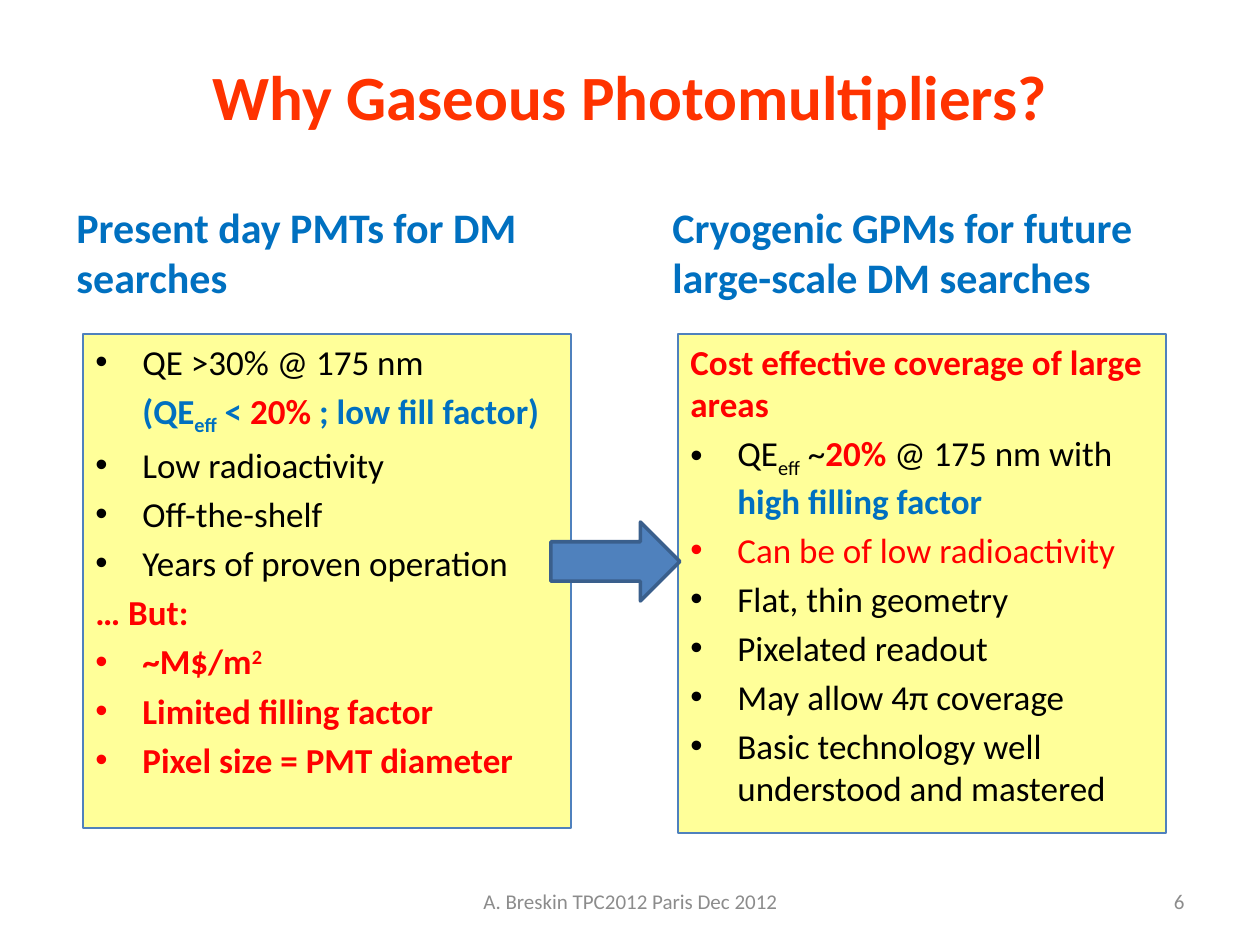
from lxml.etree import SubElement
from pptx import Presentation
from pptx.dml.color import RGBColor
from pptx.enum.shapes import MSO_SHAPE
from pptx.enum.text import MSO_ANCHOR, PP_ALIGN
from pptx.oxml.ns import qn
from pptx.util import Emu, Pt

SCALE = 914400 / 126
HANG = 47
BLACK, RED, BLUE = "000000", "FF0000", "0070C0"
ORANGE, GRAY = "FF3300", "8C8C8C"
YELLOW, STEEL, NAVY = "FFFF99", "4F81BD", "3A5F8C"
SUB, SUPER = -25000, 30000

PMT_POINTS = [
    ("bullet", [("QE >30% @ 175 nm", BLACK, False)]),
    ("indented", [("(QE", BLUE, True), ("eff", BLUE, True, SUB), (" < ", BLUE, True),
                  ("20%", RED, True), (" ; low fill factor)", BLUE, True)]),
    ("bullet", [("Low radioactivity", BLACK, False)]),
    ("bullet", [("Off-the-shelf", BLACK, False)]),
    ("bullet", [("Years of proven operation", BLACK, False)]),
    ("plain", [("… But:", RED, True)]),
    ("bullet", [("~M$/m", RED, True), ("2", RED, True, SUPER)]),
    ("bullet", [("Limited filling factor", RED, True)]),
    ("bullet", [("Pixel size = PMT diameter", RED, True)]),
]
GPM_POINTS = [
    ("plain", [("Cost effective coverage of large areas", RED, True)]),
    ("bullet", [("QE", BLACK, False), ("eff", BLACK, False, SUB), (" ~", BLACK, False),
                ("20%", RED, True), (" @ 175 nm with ", BLACK, False),
                ("high filling factor", BLUE, True)]),
    ("bullet", [("Can be of low radioactivity", RED, False)]),
    ("bullet", [("Flat, thin geometry", BLACK, False)]),
    ("bullet", [("Pixelated readout", BLACK, False)]),
    ("bullet", [("May allow 4π coverage", BLACK, False)]),
    ("bullet", [("Basic technology well understood and mastered", BLACK, False)]),
]
LABELS = [
    ((63, 16, 1134, 158), "Why Gaseous Photomultipliers?",
     36, ORANGE, True, PP_ALIGN.CENTER, MSO_ANCHOR.MIDDLE),
    ((64, 195, 496, 115), "Present day PMTs for DM searches",
     24, BLUE, True, PP_ALIGN.LEFT, MSO_ANCHOR.TOP),
    ((660, 195, 576, 115), "Cryogenic GPMs for future large-scale DM searches",
     24, BLUE, True, PP_ALIGN.LEFT, MSO_ANCHOR.TOP),
    ((903, 876, 294, 50), "6",
     12, GRAY, False, PP_ALIGN.RIGHT, MSO_ANCHOR.MIDDLE),
    ((431, 876, 399, 50), "A. Breskin TPC2012 Paris Dec 2012",
     12, GRAY, False, PP_ALIGN.CENTER, MSO_ANCHOR.MIDDLE),
]


def px(length):
    return Emu(round(length * SCALE))


def color(value):
    return RGBColor.from_string(value)


def apply(target, values):
    for name, value in values.items():
        setattr(target, name, value)


def add_run(paragraph, text, hue, bold, baseline=0, size=20):
    run = paragraph.add_run()
    run.text = text
    apply(run.font, {"name": "Calibri", "size": Pt(size), "bold": bold})
    run.font.color.rgb = color(hue)
    if baseline:
        run._r.get_or_add_rPr().set("baseline", str(baseline))


def set_indent(paragraph, kind):
    properties = paragraph._p.get_or_add_pPr()
    if kind != "plain":
        properties.set("marL", str(px(HANG)))
    if kind == "bullet":
        properties.set("indent", str(px(-HANG)))
        SubElement(properties, qn("a:buFont"), typeface="Arial")
        SubElement(properties, qn("a:buChar"), char="•")


def add_block(slide, preset, box, fill, outline, width):
    block = slide.shapes.add_shape(preset, *map(px, box))
    block.shadow.inherit = False
    block.fill.solid()
    block.fill.fore_color.rgb = color(fill)
    block.line.color.rgb = color(outline)
    block.line.width = Pt(width)
    return block


def add_panel(slide, box, points):
    frame = add_block(slide, MSO_SHAPE.RECTANGLE, box, YELLOW, STEEL, 1.5).text_frame
    apply(frame, {"word_wrap": True, "vertical_anchor": MSO_ANCHOR.TOP})
    for index, (kind, runs) in enumerate(points):
        point = frame.add_paragraph() if index else frame.paragraphs[0]
        apply(point, {"alignment": PP_ALIGN.LEFT, "space_before": Pt(4)})
        set_indent(point, kind)
        for run in runs:
            add_run(point, *run)


def add_label(slide, box, text, size, hue, bold, alignment, anchor):
    frame = slide.shapes.add_textbox(*map(px, box)).text_frame
    apply(frame, {"word_wrap": True, "vertical_anchor": anchor})
    frame.paragraphs[0].alignment = alignment
    add_run(frame.paragraphs[0], text, hue, bold, size=size)


def main():
    deck = Presentation()
    apply(deck, {"slide_width": px(1260), "slide_height": px(945)})
    slide = deck.slides.add_slide(deck.slide_layouts[6])
    add_panel(slide, (678, 334, 488, 499), GPM_POINTS)
    add_panel(slide, (83, 334, 488, 494), PMT_POINTS)
    add_block(slide, MSO_SHAPE.RIGHT_ARROW, (551, 522, 129, 79), STEEL, NAVY, 2)
    for label in LABELS:
        add_label(slide, *label)
    deck.save("out.pptx")


if __name__ == "__main__":
    main()
